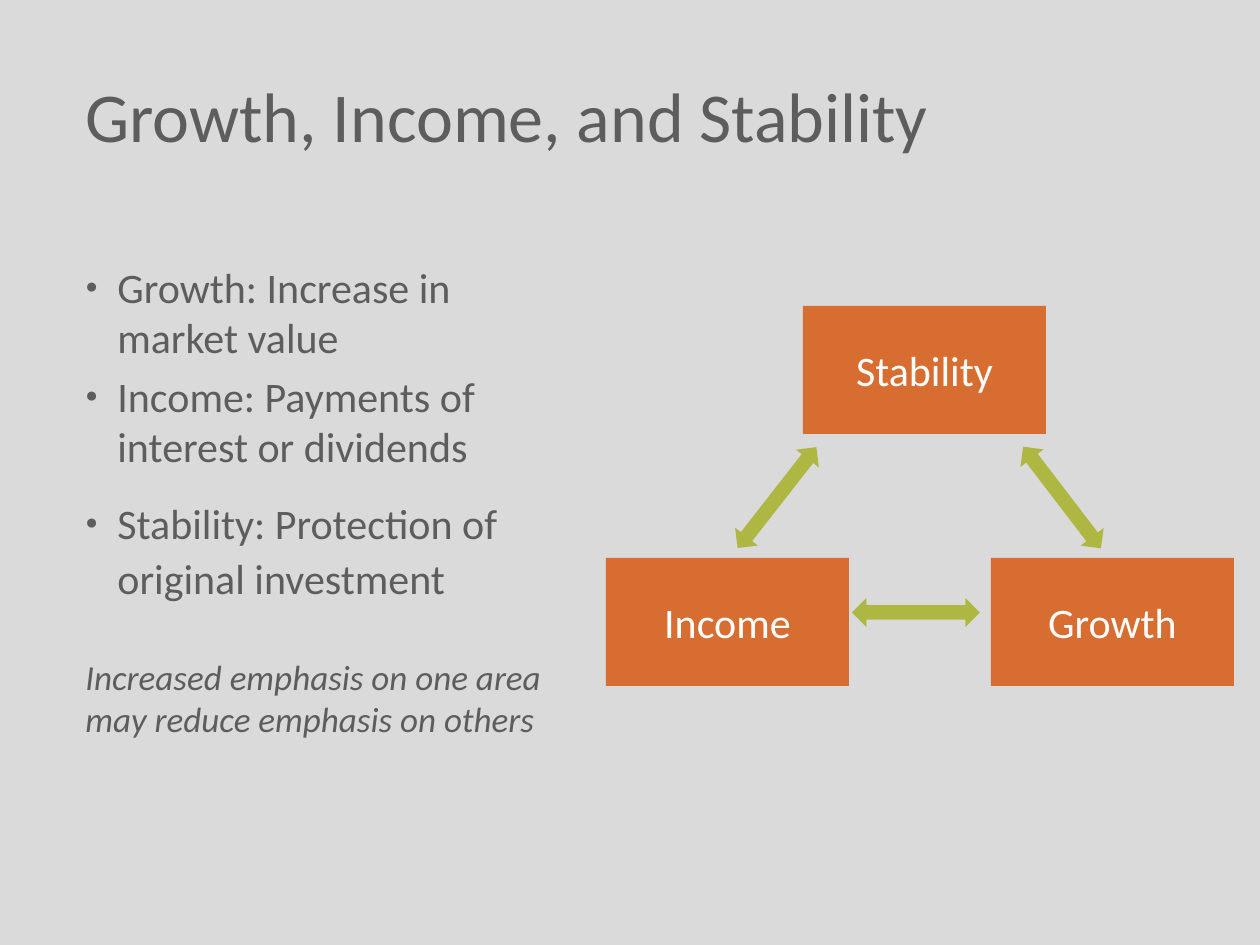
from lxml import etree
from pptx import Presentation, util as u
from pptx.dml.color import RGBColor
from pptx.enum import shapes, text
from pptx.oxml.ns import qn

SCALE = 914400 / 126
FONT = "Calibri"
BACKGROUND = RGBColor(0xDA, 0xDA, 0xDA)
GRAY = RGBColor(0x5D, 0x5D, 0x5D)
ORANGE = RGBColor(0xD7, 0x6D, 0x31)
GREEN = RGBColor(0xAF, 0xB7, 0x43)
WHITE = RGBColor(0xFF, 0xFF, 0xFF)

DEFINITIONS = [
    ("Growth: Increase in market value", 0, 1.0),
    ("Income: Payments of interest or dividends", 4.8, 1.0),
    ("Stability: Protection of original investment", 12, 1.1),
]
REMARK = "Increased emphasis on one area may reduce emphasis on others"
GOALS = [("Stability", 803, 306), ("Income", 606, 558), ("Growth", 991, 558)]
GOAL_SIZE = (243, 128)
ARROWS = [(852, 598, 0), (713, 483, 308), (998, 483, 232.6)]
ARROW_SIZE = (128, 29)


def px(length):
    return u.Emu(round(length * SCALE))


def add_run(para, words, size, color, italic=False):
    span = para.add_run()
    span.text = words
    span.font.name = FONT
    span.font.size = u.Pt(size)
    span.font.color.rgb = color
    span.font.italic = italic


def add_bullet(para):
    indent = px(32)
    properties = para._p.get_or_add_pPr()
    properties.set("marL", str(indent))
    properties.set("indent", str(-indent))
    color = etree.SubElement(properties, qn("a:buClr"))
    etree.SubElement(color, qn("a:srgbClr"), val=str(GRAY))
    etree.SubElement(properties, qn("a:buSzPct"), val="50000")
    etree.SubElement(properties, qn("a:buFont"), typeface="Arial")
    etree.SubElement(properties, qn("a:buChar"), char="●")


def set_title(page, words):
    title = page.shapes.title
    title.left, title.top, title.width, title.height = map(px, (73, 73, 1125, 82))
    frame = title.text_frame
    frame.vertical_anchor = text.MSO_ANCHOR.MIDDLE
    para = frame.paragraphs[0]
    para.alignment = text.PP_ALIGN.LEFT
    add_run(para, words, 40, GRAY)


def add_definitions(page):
    box = page.shapes.add_textbox(*map(px, (73, 255, 505, 567)))
    frame = box.text_frame
    frame.word_wrap = True
    for number, (words, before, spacing) in enumerate(DEFINITIONS):
        para = frame.add_paragraph() if number else frame.paragraphs[0]
        add_bullet(para)
        para.space_before = u.Pt(before)
        para.line_spacing = spacing
        add_run(para, words, 24, GRAY)
    remark = frame.add_paragraph()
    remark.space_before = u.Pt(30)
    add_run(remark, REMARK, 20, GRAY, italic=True)


def add_filled_shape(page, kind, left, top, size, color):
    shape = page.shapes.add_shape(kind, px(left), px(top), *map(px, size))
    shape.shadow.inherit = False
    shape.fill.solid()
    shape.fill.fore_color.rgb = color
    shape.line.fill.background()
    return shape


def add_goal(page, words, left, top):
    box = add_filled_shape(page, shapes.MSO_SHAPE.RECTANGLE, left, top, GOAL_SIZE, ORANGE)
    frame = box.text_frame
    frame.vertical_anchor = text.MSO_ANCHOR.MIDDLE
    para = frame.paragraphs[0]
    para.alignment = text.PP_ALIGN.CENTER
    add_run(para, words, 24, WHITE)


def add_arrow(page, left, top, angle):
    arrow = add_filled_shape(
        page, shapes.MSO_SHAPE.LEFT_RIGHT_ARROW, left, top, ARROW_SIZE, GREEN
    )
    arrow.rotation = angle


def main():
    deck = Presentation()
    deck.slide_width, deck.slide_height = px(1260), px(945)
    page = deck.slides.add_slide(deck.slide_layouts[5])
    page.background.fill.solid()
    page.background.fill.fore_color.rgb = BACKGROUND
    set_title(page, "Growth, Income, and Stability")
    add_definitions(page)
    for goal in GOALS:
        add_goal(page, *goal)
    for arrow in ARROWS:
        add_arrow(page, *arrow)
    deck.save("out.pptx")


if __name__ == "__main__":
    main()
